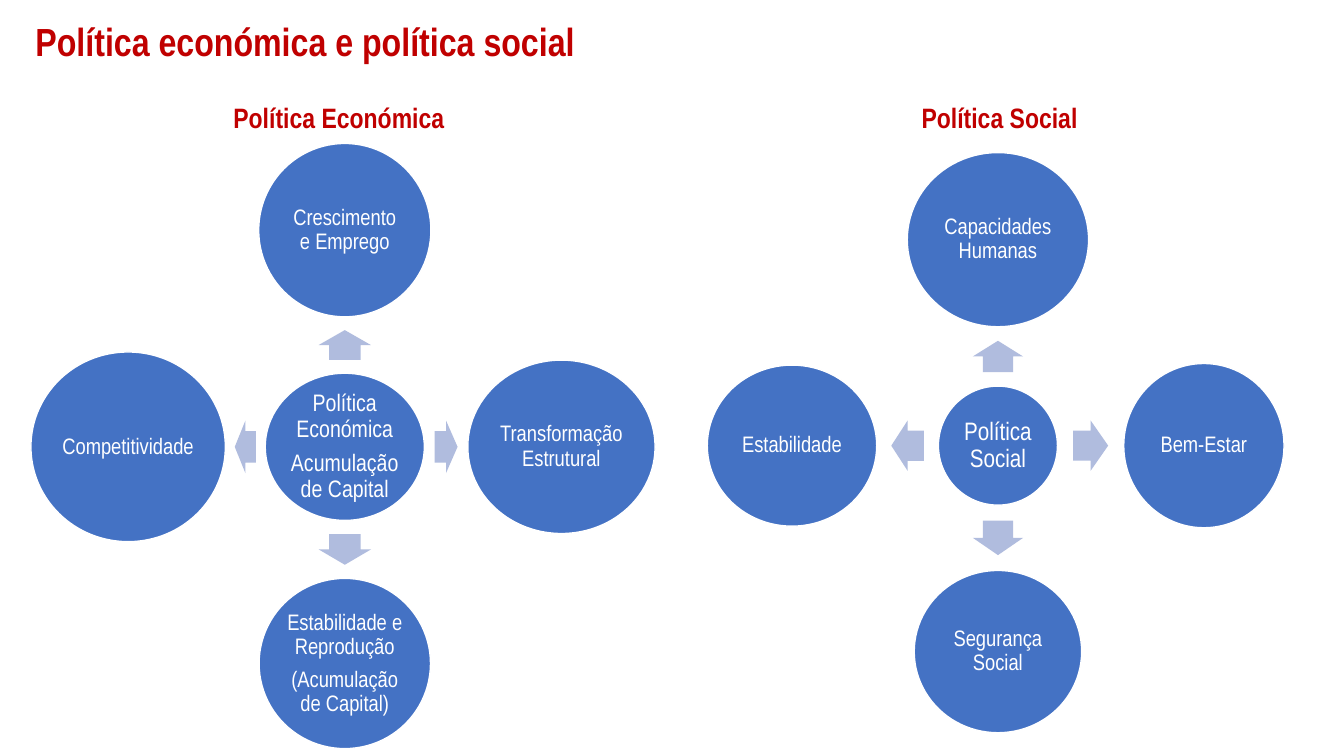
from pptx import Presentation
from pptx import util as u
from pptx.dml.color import RGBColor
from pptx.enum import shapes, text

RED = RGBColor(0xC0, 0x00, 0x00)
BLUE = RGBColor(0x44, 0x72, 0xC4)
PALE = RGBColor(0xB0, 0xBC, 0xDE)
WHITE = RGBColor(0xFF, 0xFF, 0xFF)
FONT = "Arial Narrow"
ARROW_SHARE = 0.53
DIRECTIONS = [(0, -1, 270), (1, 0, 0), (0, 1, 90), (-1, 0, 180)]

ECONOMIC = {
    "hub": ("Política Económica\nAcumulação de Capital", 4.01, 3.71, 17),
    "circles": [
        ("Crescimento e Emprego", 4.34, 4.37),
        ("Transformação Estrutural", 4.72, 4.37),
        ("Estabilidade e Reprodução\n(Acumulação de Capital)", 4.32, 4.29),
        ("Competitividade", 4.9, 4.78),
    ],
    "arrow": 1.32,
}
SOCIAL = {
    "hub": ("Política Social", 3, 3, 18),
    "circles": [
        ("Capacidades Humanas", 4.57, 4.39),
        ("Bem-Estar", 4.04, 4.14),
        ("Segurança Social", 4.22, 4.09),
        ("Estabilidade", 4.27, 4.06),
    ],
    "arrow": 1.27,
}


def write(tf, content, size, color, bold=False, align=text.PP_ALIGN.CENTER):
    tf.text = content
    tf.word_wrap = True
    tf.auto_size = text.MSO_AUTO_SIZE.NONE
    for p in tf.paragraphs:
        p.alignment = align
        p.line_spacing = 0.9
        for r in p.runs:
            r.font.name = FONT
            r.font.size = u.Pt(size)
            r.font.bold = bold
            r.font.color.rgb = color


def place(sp, box):
    sp.left, sp.top, sp.width, sp.height = [u.Cm(v) for v in box]


def title(sp, box, content):
    place(sp, box)
    write(sp.text_frame, content, 28, RED, True, text.PP_ALIGN.LEFT)
    sp.text_frame.vertical_anchor = text.MSO_ANCHOR.MIDDLE


def heading(sp, box, content):
    place(sp, box)
    write(sp.text_frame, content, 20, RED, True)
    sp.text_frame.vertical_anchor = text.MSO_ANCHOR.TOP
    sp.text_frame.paragraphs[0].space_before = u.Pt(10)


def centred(group, kind, x, y, width, height, color):
    sp = group.shapes.add_shape(
        kind, u.Cm(x - width / 2), u.Cm(y - height / 2), u.Cm(width), u.Cm(height))
    sp.shadow.inherit = False
    sp.fill.solid()
    sp.fill.fore_color.rgb = color
    return sp


def circle(group, x, y, width, height, content, size):
    sp = centred(group, shapes.MSO_SHAPE.OVAL, x, y, width, height, BLUE)
    sp.line.color.rgb = WHITE
    sp.line.width = u.Pt(1)
    tf = sp.text_frame
    tf.margin_left = tf.margin_right = tf.margin_top = tf.margin_bottom = u.Cm(0.06)
    tf.vertical_anchor = text.MSO_ANCHOR.MIDDLE
    write(tf, content, size, WHITE)
    for p in tf.paragraphs:
        p.space_after = u.Pt(6)


def arrow(group, x, y, length, breadth, rotation):
    sp = centred(group, shapes.MSO_SHAPE.RIGHT_ARROW, x, y, length, breadth, PALE)
    sp.line.fill.background()
    sp.adjustments[0] = 0.6
    sp.adjustments[1] = 0.5
    sp.rotation = rotation


def radial_diagram(s, box, data):
    left, top, side = box
    radius = side / 2
    x, y = left + radius, top + radius
    group = s.shapes.add_group_shape()
    content, hub_w, hub_h, size = data["hub"]
    circle(group, x, y, hub_w, hub_h, content, size)
    for (dx, dy, rotation), (label, w, h) in zip(DIRECTIONS, data["circles"]):
        hub_edge = (hub_w if dx else hub_h) / 2
        far_edge = radius - (w if dx else h) / 2
        middle = (hub_edge + far_edge) / 2
        length = ARROW_SHARE * (far_edge - hub_edge)
        arrow(group, x + dx * middle, y + dy * middle, length, data["arrow"], rotation)
        circle(group, x + dx * radius, y + dy * radius, w, h, label, 16)


def main():
    prs = Presentation()
    prs.slide_width, prs.slide_height = u.Cm(33.87), u.Cm(19.05)
    s = prs.slides.add_slide(prs.slide_layouts[4])
    ph = {sp.placeholder_format.idx: sp for sp in s.placeholders}
    title(ph[0], (0.64, 0.38, 32.72, 1.47), "Política económica e política social")
    heading(ph[1], (0.41, 2.49, 16.26, 1.65), "Política Económica")
    heading(ph[3], (17.2, 2.49, 15.98, 1.65), "Política Social")
    for idx in (2, 4):
        ph[idx].element.getparent().remove(ph[idx].element)
    radial_diagram(s, (3.23, 5.8, 10.92), ECONOMIC)
    radial_diagram(s, (19.96, 6.04, 10.38), SOCIAL)
    prs.save("out.pptx")


if __name__ == "__main__":
    main()
